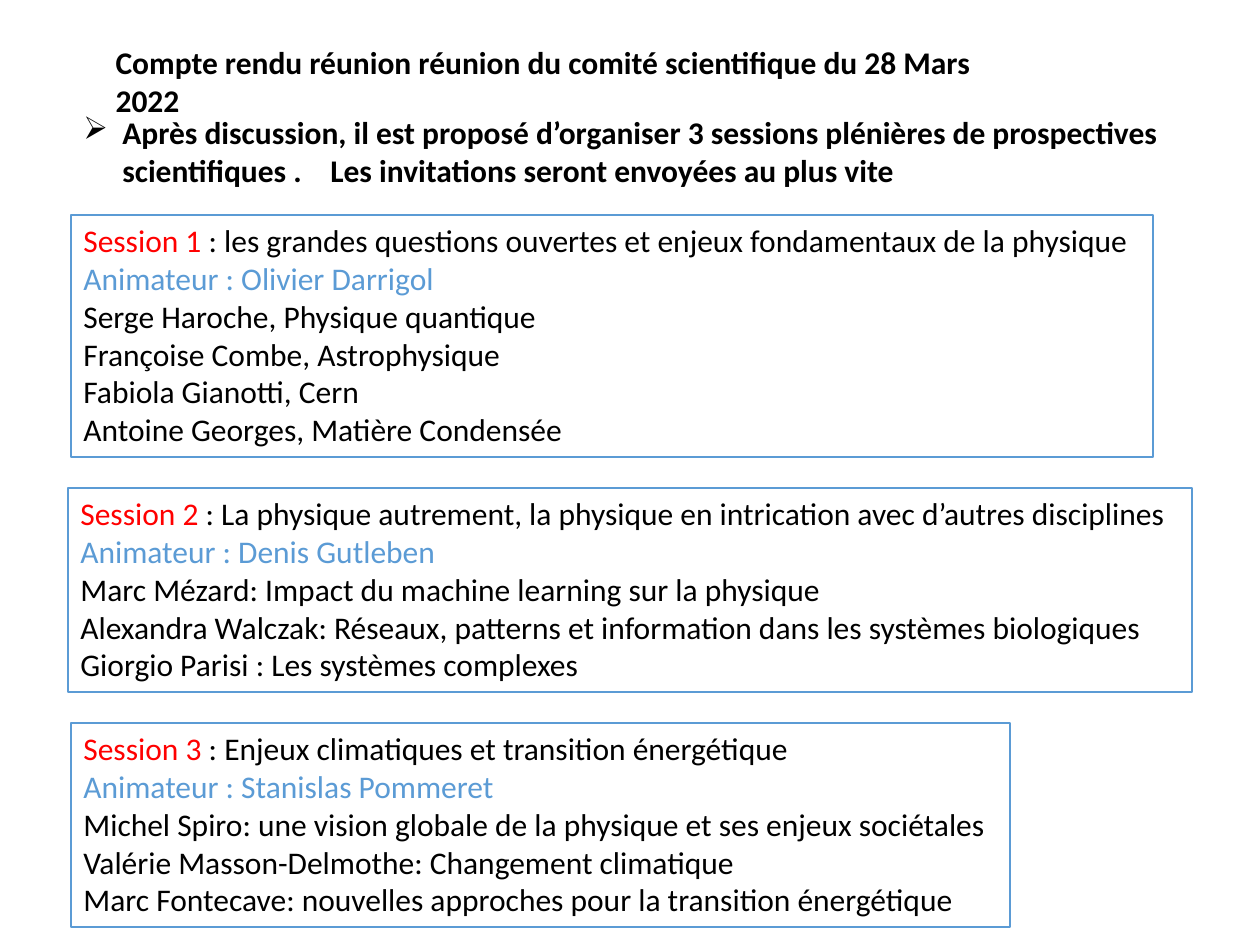
"""Build the meeting report slide with its three plenary sessions."""
import pptx
import pptx.dml.color
import pptx.enum.text
import pptx.oxml
import pptx.oxml.ns
import pptx.util

PX = 914400 / 126
COLORS = {"black": "000000", "red": "FF0000", "blue": "5B9BD5"}
SESSIONS = [
    ((71, 215, 1082, 242), "Session 1",
     "les grandes questions ouvertes et enjeux fondamentaux de la physique",
     "Olivier Darrigol",
     ["Serge Haroche, Physique quantique",
      "Françoise Combe, Astrophysique",
      "Fabiola Gianotti, Cern",
      "Antoine Georges, Matière Condensée"]),
    ((68, 488, 1124, 204), "Session 2",
     "La physique autrement, la physique en intrication avec d’autres disciplines",
     "Denis Gutleben",
     ["Marc Mézard: Impact du machine learning sur la physique",
      "Alexandra Walczak: Réseaux, patterns et information dans les systèmes biologiques",
      "Giorgio Parisi : Les systèmes complexes"]),
    ((71, 723, 939, 204), "Session 3",
     "Enjeux climatiques et transition énergétique",
     "Stanislas Pommeret",
     ["Michel Spiro: une vision globale de la physique et ses enjeux sociétales",
      "Valérie Masson-Delmothe: Changement climatique",
      "Marc Fontecave: nouvelles approches pour la transition énergétique"]),
]


def emu(px):
    """Turn a length in px into EMU."""
    return pptx.util.Emu(round(px * PX))


def color(name):
    """Return the named colour."""
    return pptx.dml.color.RGBColor.from_string(COLORS[name])


def add_span(para, text, tint="black", bold=False):
    """Append one formatted run to a paragraph."""
    span = para.add_run()
    span.text = text
    span.font.name = "Calibri"
    span.font.size = pptx.util.Pt(18)
    span.font.bold = bold
    span.font.color.rgb = color(tint)


def prepare_frame(box, wrap):
    """Set the common text frame behaviour and return the frame."""
    frame = box.text_frame
    frame.word_wrap = wrap
    frame.auto_size = pptx.enum.text.MSO_AUTO_SIZE.SHAPE_TO_FIT_TEXT
    frame.vertical_anchor = pptx.enum.text.MSO_ANCHOR.TOP
    return frame


def place_title(page, area, text):
    """Place the title placeholder in the given area."""
    box = page.shapes.title
    box.left, box.top, box.width, box.height = map(emu, area)
    para = prepare_frame(box, False).paragraphs[0]
    para.alignment = pptx.enum.text.PP_ALIGN.LEFT
    add_span(para, text, bold=True)


def add_decision(page, area, decision, follow_up):
    """Add the bulleted decision, with its follow-up after a tab stop."""
    box = page.shapes.add_textbox(*map(emu, area))
    para = prepare_frame(box, True).paragraphs[0]
    properties = para._p.get_or_add_pPr()
    properties.set("marL", str(emu(39)))
    properties.set("indent", str(emu(-39)))
    namespace = pptx.oxml.ns.nsdecls("a")
    for xml in (f'<a:buFont {namespace} typeface="Wingdings"/>',
                f'<a:buChar {namespace} char="Ø"/>',
                f'<a:tabLst {namespace}><a:tab pos="{emu(247)}" algn="l"/></a:tabLst>'):
        properties.append(pptx.oxml.parse_xml(xml))
    add_span(para, decision + "\t" + follow_up, bold=True)


def add_session(page, area, label, topic, host, speakers):
    """Add one outlined session box with its topic, host and speakers."""
    box = page.shapes.add_textbox(*map(emu, area))
    box.line.color.rgb = color("blue")
    box.line.width = pptx.util.Pt(0.75)
    frame = prepare_frame(box, False)
    heading = frame.paragraphs[0]
    add_span(heading, label, "red")
    add_span(heading, " : " + topic)
    add_span(frame.add_paragraph(), "Animateur : " + host, "blue")
    for speaker in speakers:
        add_span(frame.add_paragraph(), speaker)


def main():
    """Build and save the deck."""
    deck = pptx.Presentation()
    deck.slide_width, deck.slide_height = emu(1260), emu(945)
    page = deck.slides.add_slide(deck.slide_layouts.get_by_name("Title Only"))
    place_title(page, (103, 37, 951, 50),
                "Compte rendu réunion réunion du comité scientifique du 28 Mars 2022")
    add_decision(page, (71, 107, 1173, 89),
                 "Après discussion, il est proposé d’organiser 3 sessions plénières "
                 "de prospectives scientifiques .",
                 "Les invitations seront envoyées au plus vite")
    for session in SESSIONS:
        add_session(page, *session)
    deck.save("out.pptx")


if __name__ == "__main__":
    main()
